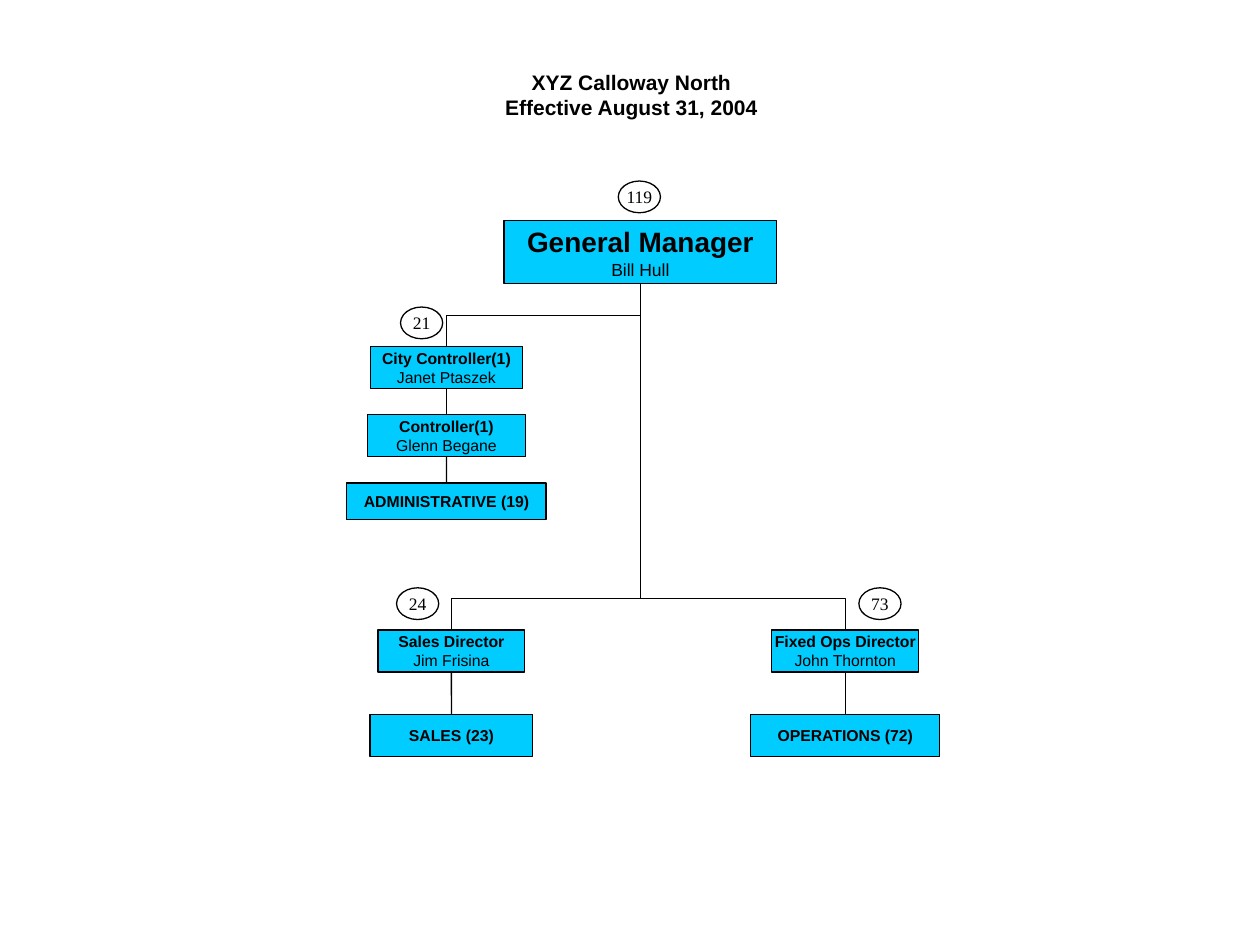
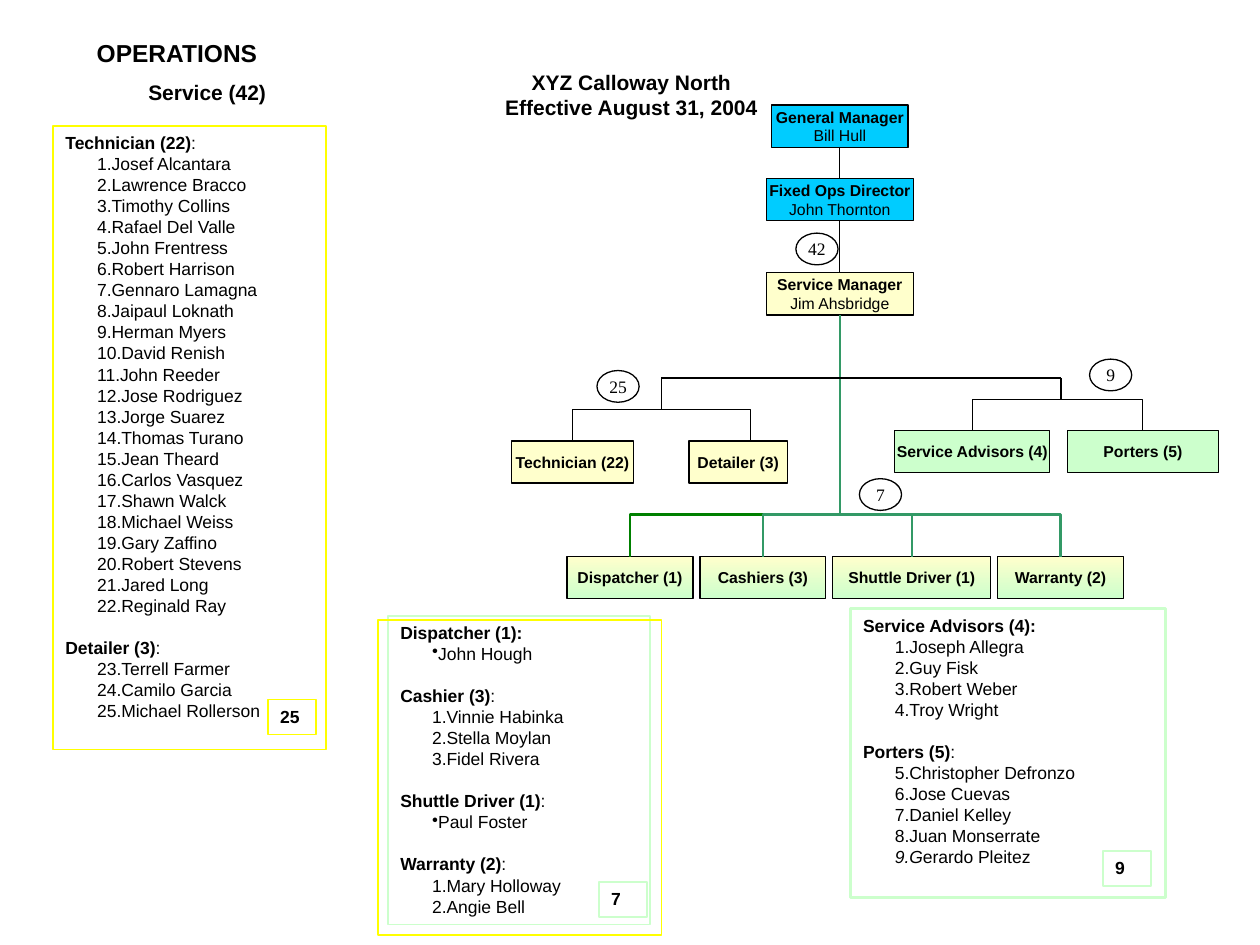
from dataclasses import dataclass

import lxml.etree
import pptx
import pptx.dml.color
import pptx.enum.shapes
import pptx.enum.text
import pptx.oxml.ns
import pptx.util

Cm = pptx.util.Cm
Pt = pptx.util.Pt
qn = pptx.oxml.ns.qn
Shapes = pptx.enum.shapes.MSO_SHAPE
Connectors = pptx.enum.shapes.MSO_CONNECTOR
Align = pptx.enum.text.PP_ALIGN
Anchor = pptx.enum.text.MSO_ANCHOR


@dataclass(frozen=True)
class Theme:
    black: str = "000000"
    blue: str = "00CCFF"
    cream: str = "FFFFCC"
    mint: str = "CCFFCC"
    yellow: str = "FFFF00"
    teal: str = "339966"
    green: str = "008000"
    font: str = "Arial"
    badge_font: str = "Times New Roman"
    box_size: float = 9
    list_size: float = 10
    title_size: float = 12
    section_size: float = 14
    top_box_size: float = 16
    thin: float = 0.75
    medium: float = 1
    branch: float = 1.25
    thick: float = 1.5
    box_height: float = 0.85


def rgb(color):
    return pptx.dml.color.RGBColor.from_string(color)


class OrgChart:
    """Draws chart elements on the current slide; all lengths are centimetres."""

    def __init__(self, presentation, theme):
        self.presentation = presentation
        self.theme = theme
        self.slide = None

    def new_slide(self):
        self.slide = self.presentation.slides.add_slide(
            self.presentation.slide_layouts[6])
        self.text(9.53, 1.27, 6.4, 1.27,
                  ["XYZ Calloway North", "Effective August 31, 2004"],
                  self.theme.title_size, Align.CENTER)

    def run(self, paragraph, text, size, bold=False, italic=False, font=None):
        run = paragraph.add_run()
        run.text = text
        run.font.size = Pt(size)
        run.font.bold = bold
        run.font.italic = italic
        run.font.name = font or self.theme.font
        run.font.color.rgb = rgb(self.theme.black)

    def text(self, left, top, width, height, lines, size, align=Align.LEFT):
        frame = self.slide.shapes.add_textbox(
            Cm(left), Cm(top), Cm(width), Cm(height)).text_frame
        frame.word_wrap = True
        for index, line in enumerate(lines):
            paragraph = frame.add_paragraph() if index else frame.paragraphs[0]
            paragraph.alignment = align
            self.run(paragraph, line, size, bold=True)

    def shape(self, kind, left, top, width, height, fill=None, line=None,
              weight=None):
        """fill is None, one colour, or a pair for a top-to-bottom gradient."""
        shape = self.slide.shapes.add_shape(
            kind, Cm(left), Cm(top), Cm(width), Cm(height))
        shape.shadow.inherit = False
        shape.line.color.rgb = rgb(line or self.theme.black)
        shape.line.width = Pt(weight or self.theme.thin)
        if fill is None:
            shape.fill.background()
        elif isinstance(fill, tuple):
            shape.fill.gradient()
            shape.fill.gradient_angle = 270
            for stop, color in zip(shape.fill.gradient_stops, fill):
                stop.color.rgb = rgb(color)
        else:
            shape.fill.solid()
            shape.fill.fore_color.rgb = rgb(fill)
        return shape

    def center_text(self, shape):
        frame = shape.text_frame
        frame.word_wrap = False
        frame.vertical_anchor = Anchor.MIDDLE
        frame.margin_left = frame.margin_right = 0
        frame.margin_top = frame.margin_bottom = 0
        frame.paragraphs[0].alignment = Align.CENTER
        return frame

    def box(self, center, top, width, title, person=None, fill=None,
            height=None, title_size=None, person_size=None):
        shape = self.shape(Shapes.RECTANGLE, center - width / 2, top, width,
                           height or self.theme.box_height,
                           fill or self.theme.blue)
        frame = self.center_text(shape)
        self.run(frame.paragraphs[0], title,
                 title_size or self.theme.box_size, bold=True)
        if person:
            paragraph = frame.add_paragraph()
            paragraph.alignment = Align.CENTER
            self.run(paragraph, person, person_size or self.theme.box_size)
        return shape

    def badge(self, center, top, count):
        width, height = 0.85, 0.64
        shape = self.shape(Shapes.OVAL, center - width / 2, top, width, height)
        frame = self.center_text(shape)
        self.run(frame.paragraphs[0], str(count), self.theme.list_size,
                 font=self.theme.badge_font)

    def style_connector(self, connector, color, weight):
        connector.line.color.rgb = rgb(color or self.theme.black)
        connector.line.width = Pt(weight or self.theme.thin)
        lxml.etree.SubElement(connector._element.spPr, qn("a:effectLst"))

    def line(self, start, end, color=None, weight=None):
        """Join points, or a shape's bottom (start) and a shape's top (end)."""
        ends = [point if isinstance(point, tuple) else (0, 0)
                for point in (start, end)]
        connector = self.slide.shapes.add_connector(
            Connectors.STRAIGHT, *(Cm(value) for point in ends for value in point))
        if not isinstance(start, tuple):
            connector.begin_connect(start, 2)
        if not isinstance(end, tuple):
            connector.end_connect(end, 0)
        self.style_connector(connector, color, weight)

    def elbow(self, child, parent, bends=1, color=None, weight=None):
        """Rise from the child point, then turn towards the parent point above."""
        (child_x, child_y), (parent_x, parent_y) = child, parent
        rise, run = child_y - parent_y, abs(parent_x - child_x)
        middle_x, middle_y = (child_x + parent_x) / 2, (child_y + parent_y) / 2
        near, far = middle_x - rise / 2, middle_x + rise / 2
        turn = 270
        if parent_x < child_x:
            near, far, turn = far, near, 90
        connector = self.slide.shapes.add_connector(
            Connectors.ELBOW, Cm(near), Cm(middle_y - run / 2),
            Cm(far), Cm(middle_y + run / 2))
        properties = connector._element.spPr
        properties.find(qn("a:xfrm")).set("rot", str(turn * 60000))
        properties.find(qn("a:prstGeom")).set("prst", f"bentConnector{bends + 1}")
        self.style_connector(connector, color, weight)

    def bullet(self, paragraph, number):
        """Number the paragraph, or give it a dot when number is None."""
        paragraph.level = 1
        properties = paragraph._p.get_or_add_pPr()
        if number is None:
            lxml.etree.SubElement(properties, qn("a:buChar")).set("char", "•")
        else:
            numbering = lxml.etree.SubElement(properties, qn("a:buAutoNum"))
            numbering.set("type", "arabicPeriod")
            if number > 1:
                numbering.set("startAt", str(number))

    def indent(self, paragraph, left, first):
        properties = paragraph._p.get_or_add_pPr()
        properties.set("marL", str(Cm(left)))
        properties.set("indent", str(Cm(first)))

    def panel(self, left, top, width, height, color, weight, groups):
        """groups holds (heading, first number or None, names)."""
        size = self.theme.list_size
        shape = self.shape(Shapes.RECTANGLE, left, top, width, height,
                           line=color, weight=weight)
        frame = shape.text_frame
        frame.word_wrap = True
        frame.vertical_anchor = Anchor.TOP
        for index, (heading, first, names) in enumerate(groups):
            paragraph = frame.add_paragraph() if index else frame.paragraphs[0]
            paragraph.alignment = Align.LEFT
            paragraph.space_before = Pt(12 if index else 0)
            self.indent(paragraph, 1.27, -1.27)
            self.run(paragraph, heading, size, bold=True)
            if names and not heading.endswith(":"):
                self.run(paragraph, ":", size)
            for name in names:
                paragraph = frame.add_paragraph()
                paragraph.alignment = Align.LEFT
                self.indent(paragraph, 0.32, 0.32)
                self.bullet(paragraph, first)
                self.run(paragraph, name, size)
        return shape

    def total(self, left, top, count, color):
        self.panel(left, top, 0.97, 0.71, color, self.theme.medium,
                   [(str(count), None, [])])


def draw_overview(chart):
    theme = chart.theme
    chart.new_slide()
    trunk, controllers, sales, operations = 12.91, 9, 9.1, 17.04
    directors_top, teams_top, fork = 12.7, 14.4, 11.43

    manager = chart.box(trunk, 4.45, 5.5, "General Manager", "Bill Hull",
                        height=1.27, title_size=theme.top_box_size,
                        person_size=theme.list_size)
    chart.line(manager, (trunk, fork))

    city = chart.box(controllers, 6.99, 3.07, "City Controller(1)", "Janet Ptaszek")
    controller = chart.box(controllers, 8.36, 3.18, "Controller(1)", "Glenn Begane")
    administrative = chart.box(controllers, 9.74, 4.02, "ADMINISTRATIVE (19)",
                               height=0.74)
    chart.elbow((controllers, 6.99), (trunk, 5.72), bends=2)
    chart.line(city, controller)
    chart.line(controller, administrative)

    for center, title, person, team, team_width in (
            (sales, "Sales Director", "Jim Frisina", "SALES (23)", 3.28),
            (operations, "Fixed Ops Director", "John Thornton",
             "OPERATIONS (72)", 3.81)):
        director = chart.box(center, directors_top, 2.96, title, person)
        chart.line(director, chart.box(center, teams_top, team_width, team))
        chart.elbow((center, directors_top), (trunk, fork), bends=2)

    for center, top, count in ((12.89, 3.65, 119), (8.5, 6.19, 21),
                               (8.42, 11.85, 24), (17.74, 11.85, 73)):
        chart.badge(center, top, count)


def draw_service_tree(chart):
    theme = chart.theme
    trunk, branch_top, bus_top, staff_top = 16.93, 7.62, 10.37, 11.22

    general = chart.box(trunk, 2.12, 2.75, "General Manager", "Bill Hull")
    director = chart.box(trunk, 3.6, 2.96, "Fixed Ops Director", "John Thornton")
    manager = chart.box(trunk, 5.5, 2.96, "Service Manager", "Jim Ahsbridge",
                        theme.cream)
    chart.line(general, director)
    chart.line(director, manager)

    left, gap = 11.43, 0.14
    for title, width, color in (("Dispatcher (1)", 2.54, theme.green),
                                ("Cashiers (3)", 2.54, theme.teal),
                                ("Shuttle Driver (1)", 3.18, theme.teal),
                                ("Warranty (2)", 2.54, theme.teal)):
        center = left + width / 2
        chart.box(center, staff_top, width, title, fill=(theme.cream, theme.mint))
        chart.elbow((center, staff_top), (trunk, bus_top), color=color,
                    weight=theme.branch)
        left += width + gap
    chart.line(manager, (trunk, bus_top), theme.teal, theme.branch)

    # Each team: box centre, connector foot, width, title
    for stem, bracket_top, teams_top, fill, teams in (
            (13.33, 8.26, 8.89, theme.cream,
             ((11.54, 11.54, 2.46, "Technician (22)"),
              (14.88, 15.13, 1.98, "Detailer (3)"))),
            (21.39, 8.05, 8.68, theme.mint,
             ((19.6, 19.6, 3.12, "Service Advisors (4)"),
              (23.04, 23.04, 3.05, "Porters (5)")))):
        chart.line((trunk, branch_top), (stem, branch_top))
        chart.line((stem, branch_top), (stem, bracket_top))
        for center, foot, width, title in teams:
            chart.box(center, teams_top, width, title, fill=fill)
            chart.elbow((foot, teams_top), (stem, bracket_top))

    for center, top, count in ((16.47, 4.7, 42), (12.46, 7.47, 25),
                               (22.39, 7.24, 9), (17.75, 9.65, 7)):
        chart.badge(center, top, count)


def draw_service_lists(chart):
    theme = chart.theme
    chart.text(1.7, 0.64, 4.2, 0.84, ["OPERATIONS"], theme.section_size)
    chart.text(2.74, 1.47, 4.01, 0.76, ["Service (42)"], theme.title_size)

    chart.panel(1.07, 2.54, 5.5, 12.57, theme.yellow, theme.medium, [
        ("Technician (22)", 1, [
            "Josef Alcantara", "Lawrence Bracco", "Timothy Collins",
            "Rafael Del Valle", "John Frentress", "Robert Harrison",
            "Gennaro Lamagna", "Jaipaul Loknath", "Herman Myers",
            "David Renish", "John Reeder", "Jose Rodriguez", "Jorge Suarez",
            "Thomas Turano", "Jean Theard", "Carlos Vasquez", "Shawn Walck",
            "Michael Weiss", "Gary Zaffino", "Robert Stevens", "Jared Long",
            "Reginald Ray"]),
        ("Detailer (3)", 23, ["Terrell Farmer", "Camilo Garcia",
                              "Michael Rollerson"])])
    advisors = chart.panel(17.15, 12.27, 6.35, 5.82, theme.mint, theme.thick, [
        ("Service Advisors (4):", 1, ["Joseph Allegra", "Guy Fisk",
                                      "Robert Weber", "Troy Wright"]),
        ("Porters (5)", 5, ["Christopher Defronzo", "Jose Cuevas",
                            "Daniel Kelley", "Juan Monserrate", "G"])])
    last_porter = advisors.text_frame.paragraphs[-1]
    last_porter.runs[0].font.italic = True
    chart.run(last_porter, "erardo Pleitez", theme.list_size)
    chart.panel(7.82, 12.42, 5.28, 6.22, theme.mint, theme.medium, [
        ("Dispatcher (1):", None, ["John Hough"]),
        ("Cashier (3)", 1, ["Vinnie Habinka", "Stella Moylan", "Fidel Rivera"]),
        ("Shuttle Driver (1)", None, ["Paul Foster"]),
        ("Warranty (2)", 1, ["Mary Holloway", "Angie Bell"])])
    chart.shape(Shapes.RECTANGLE, 7.62, 12.5, 5.72, 6.35, line=theme.yellow)

    chart.total(22.23, 17.15, 9, theme.mint)
    chart.total(12.07, 17.78, 7, theme.mint)
    chart.total(5.4, 14.1, 25, theme.yellow)


def main():
    presentation = pptx.Presentation()
    presentation.slide_width = Cm(25.4)
    presentation.slide_height = Cm(19.05)
    chart = OrgChart(presentation, Theme())
    draw_overview(chart)
    chart.new_slide()
    draw_service_tree(chart)
    draw_service_lists(chart)
    presentation.save("out.pptx")


if __name__ == "__main__":
    main()
